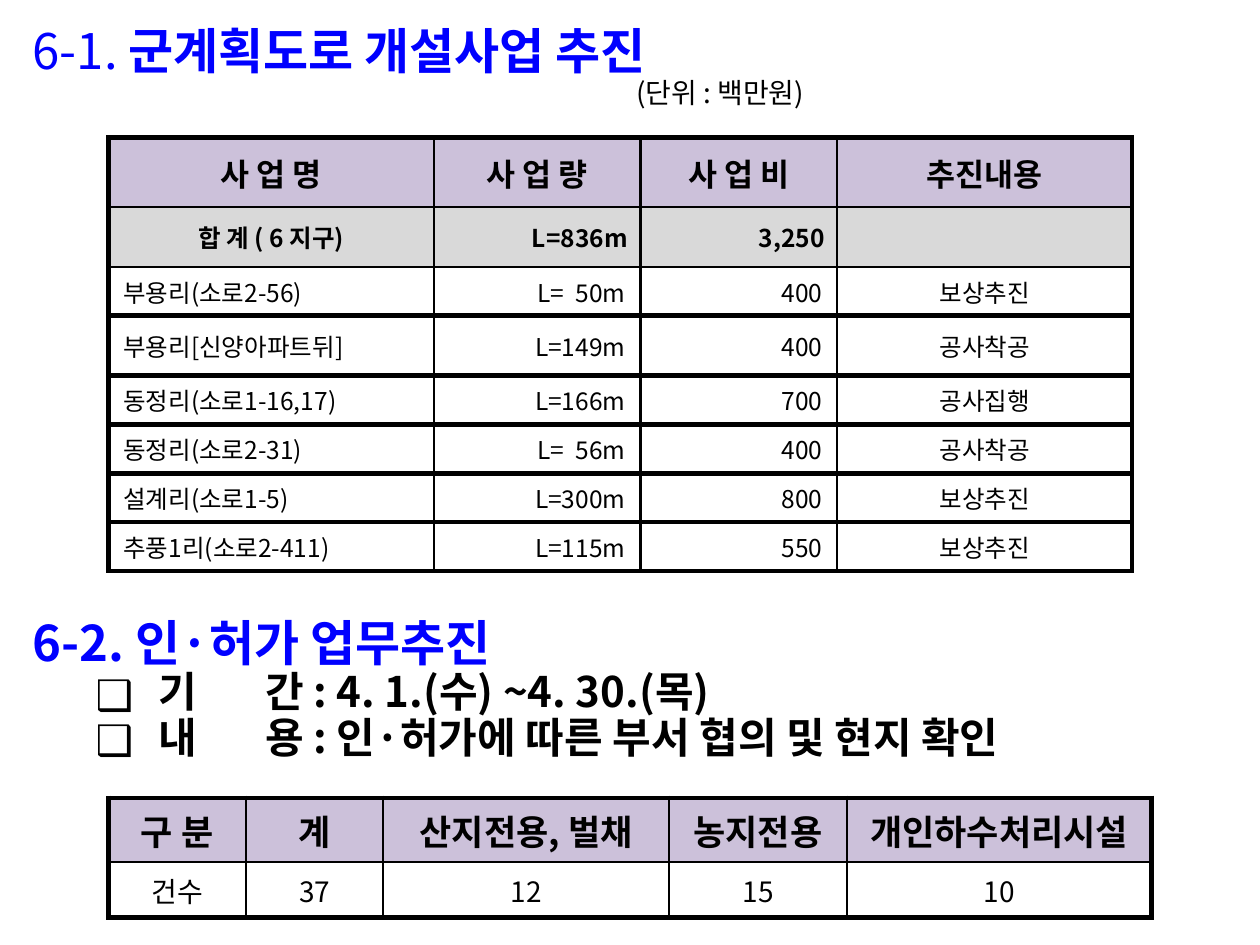
"""Build the slide on county road projects and permit work."""
from lxml.etree import SubElement
from pptx import Presentation
from pptx.dml.color import RGBColor
from pptx.enum.text import MSO_ANCHOR, MSO_AUTO_SIZE, PP_ALIGN
from pptx.oxml import parse_xml
from pptx.oxml.ns import nsdecls, qn
from pptx.util import Pt

FONT = "Noto Sans CJK KR"
BLUE = RGBColor(0x00, 0x00, 0xFF)
BLACK = RGBColor(0x00, 0x00, 0x00)
LILAC = RGBColor(0xCC, 0xC1, 0xDA)
GREY = RGBColor(0xD9, 0xD9, 0xD9)
THICK, THIN = 3, 1.41
LEFT, CENTER, RIGHT = PP_ALIGN.LEFT, PP_ALIGN.CENTER, PP_ALIGN.RIGHT


def add_span(para, text, size, color=BLACK, bold=False):
    span = para.add_run()
    span.text = text
    span.font.size = Pt(size)
    span.font.bold = bold
    span.font.color.rgb = color
    span.font.name = FONT
    SubElement(span.font._element, qn("a:ea"), typeface=FONT)


def add_grid(page, left, top, widths, heights, rows, styles, lines):
    frame = page.shapes.add_table(len(rows), len(widths), Pt(left), Pt(top),
                                  Pt(sum(widths)), Pt(sum(heights)))
    table = frame.table
    table.first_row = table.horz_banding = False
    for column, width in zip(table.columns, widths):
        column.width = Pt(width)
    sides = [THICK] + [THIN] * (len(widths) - 1) + [THICK]
    for r, (texts, style) in enumerate(zip(rows, styles)):
        size, bold, fill, margin, aligns = style
        table.rows[r].height = Pt(heights[r])
        for c, text in enumerate(texts):
            cell = table.cell(r, c)
            cell.vertical_anchor = MSO_ANCHOR.MIDDLE
            cell.margin_left = cell.margin_right = Pt(margin)
            cell.margin_top = cell.margin_bottom = Pt(3.6)
            if fill is None:
                cell.fill.background()
            else:
                cell.fill.solid()
                cell.fill.fore_color.rgb = fill
            para = cell.text_frame.paragraphs[0]
            para.alignment = aligns[c]
            if text:
                add_span(para, text, size, bold=bold)
            weights = {"lnL": sides[c], "lnR": sides[c + 1],
                       "lnT": lines[r], "lnB": lines[r + 1]}
            properties = cell._tc.get_or_add_tcPr()
            for place, (side, weight) in enumerate(weights.items()):
                properties.insert(place, parse_xml(
                    f'<a:{side} {nsdecls("a")} w="{Pt(weight)}"><a:solidFill>'
                    f'<a:srgbClr val="{BLACK}"/></a:solidFill></a:{side}>'))


deck = Presentation()
deck.slide_width, deck.slide_height = Pt(720), Pt(540)
page = deck.slides.add_slide(deck.slide_layouts[1])
title, body = page.placeholders

places = [(title, 11.5, 11.5, 686, 65, 0), (body, 11.5, 343.5, 692, 196.5, 10)]
for box, left, top, width, height, inset in places:
    box.left, box.top = Pt(left), Pt(top)
    box.width, box.height = Pt(width), Pt(height)
    box.text_frame.word_wrap = True
    box.text_frame.auto_size = MSO_AUTO_SIZE.NONE
    box.text_frame.vertical_anchor = MSO_ANCHOR.TOP
    box.text_frame.margin_top = Pt(inset)

heading = title.text_frame.paragraphs[0]
heading.alignment = LEFT
add_span(heading, "6-1. ", 28, BLUE)
add_span(heading, "군계획도로 개설사업 추진", 28, BLUE, True)
unit = title.text_frame.add_paragraph()
unit.alignment = LEFT
unit.line_spacing = 0.9
unit._p.get_or_add_pPr().set("marL", str(Pt(345)))
add_span(unit, "(단위 : 백만원)", 16)

heading = body.text_frame.paragraphs[0]
heading.line_spacing = 0.9
heading.space_before = Pt(0)
properties = heading._p.get_or_add_pPr()
properties.set("marL", "0")
properties.set("indent", "0")
SubElement(properties, qn("a:buNone"))
add_span(heading, "6-2. 인·허가 업무추진", 28, BLUE, True)

for text in ["기\t간 : 4. 1.(수) ~4. 30.(목)",
             "내\t용 : 인·허가에 따른 부서 협의 및 현지 확인"]:
    para = body.text_frame.add_paragraph()
    para.line_spacing = 0.9
    para.space_before = Pt(0)
    properties = para._p.get_or_add_pPr()
    properties.set("marL", str(Pt(72)))
    properties.set("indent", str(Pt(-36)))
    SubElement(properties, qn("a:buFont"), typeface=FONT)
    SubElement(properties, qn("a:buChar"), char="❑")
    tabs = SubElement(properties, qn("a:tabLst"))
    SubElement(tabs, qn("a:tab"), pos=str(Pt(133)), algn="l")
    add_span(para, text, 24, bold=True)

projects = [
    ["사 업 명", "사 업 량", "사 업 비", "추진내용"],
    ["합 계 ( 6 지구)", "L=836m", "3,250", ""],
    ["부용리(소로2-56)", "L=  50m", "400", "보상추진"],
    ["부용리[신양아파트뒤]", "L=149m", "400", "공사착공"],
    ["동정리(소로1-16,17)", "L=166m", "700", "공사집행"],
    ["동정리(소로2-31)", "L=  56m", "400", "공사착공"],
    ["설계리(소로1-5)", "L=300m", "800", "보상추진"],
    ["추풍1리(소로2-411)", "L=115m", "550", "보상추진"],
]
project_styles = [
    (18, True, LILAC, 7.2, [CENTER] * 4),
    (14, True, GREY, 7.2, [CENTER, RIGHT, RIGHT, CENTER]),
] + [(14, False, None, 8.5, [LEFT, RIGHT, RIGHT, CENTER])] * 6
add_grid(page, 62, 78.5, [186, 118, 112.5, 168.5],
         [40, 34, 28, 34, 28, 28, 28, 28], projects, project_styles,
         [THICK, THIN, THIN] + [THICK] * 6)

permits = [
    ["구 분", "계", "산지전용, 벌채", "농지전용", "개인하수처리시설"],
    ["건수", "37", "12", "15", "10"],
]
permit_styles = [(20, True, LILAC, 7.2, [CENTER] * 5),
                 (16, False, None, 7.2, [CENTER] * 5)]
add_grid(page, 62, 456, [78.5, 78.5, 163.5, 101.5, 174], [36.5, 32],
         permits, permit_styles, [THICK, THIN, THICK])

deck.save("out.pptx")
